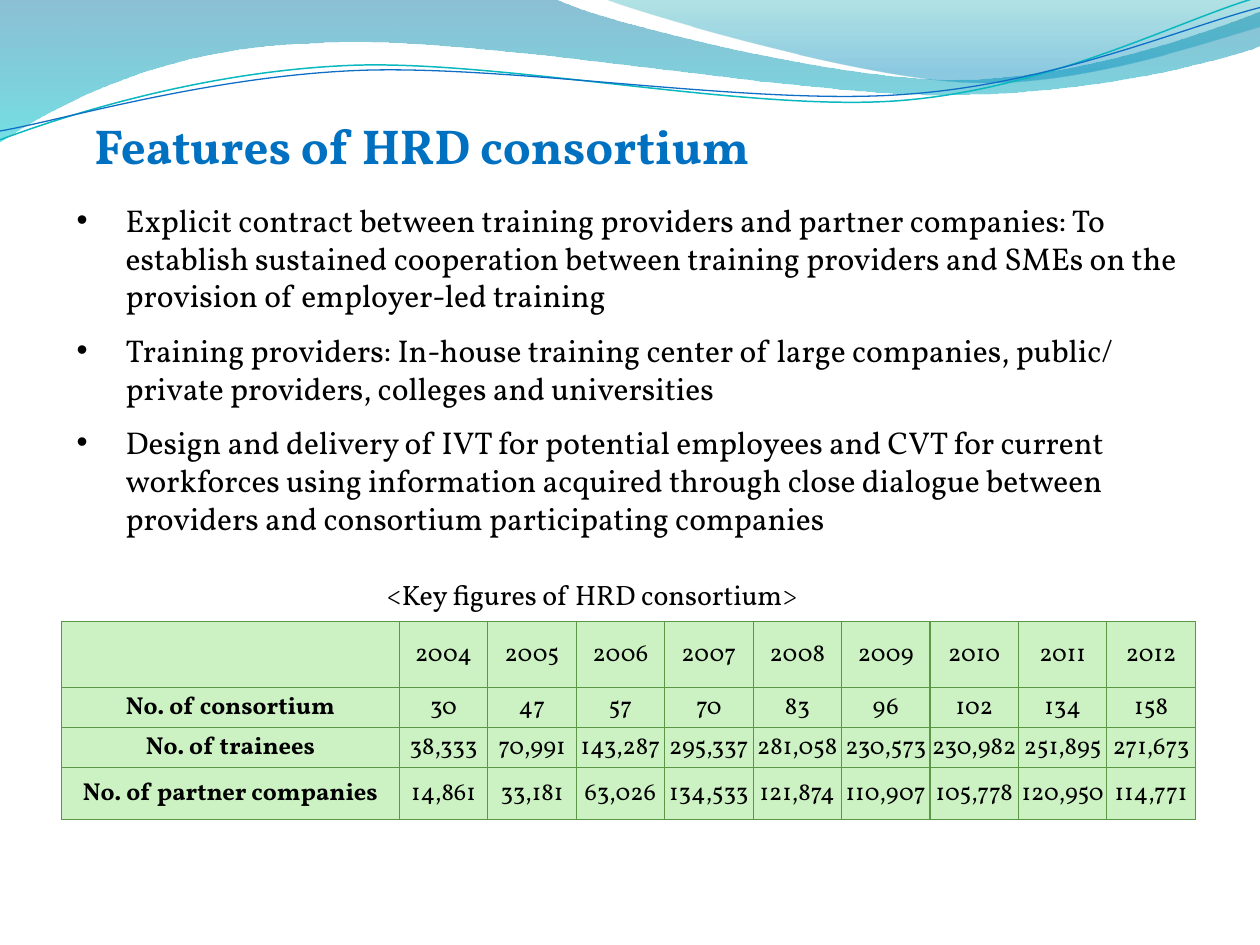
from lxml.etree import SubElement
from pptx import Presentation
from pptx.dml.color import RGBColor
from pptx.enum.text import MSO_ANCHOR as Anchor, PP_ALIGN as Align
from pptx.oxml import parse_xml
from pptx.oxml.ns import nsdecls, qn
from pptx.util import Pt

FONT = "Vollkorn"


def color(value):
    return RGBColor.from_string(value)


def style(para, size, value="000000", bold=False):
    for span in para.runs:
        span.font.name = FONT
        span.font.size = Pt(size)
        span.font.bold = bold
        span.font.color.rgb = color(value)


deck = Presentation()
deck.slide_width, deck.slide_height = Pt(720), Pt(540)
page = deck.slides.add_slide(deck.slide_layouts[6])

waves = [
    ((0, 0), [
        [(4.4, -0.01)],
        [(4.76, 0.17), (6.64, 0.63), (7.58, 0.63)],
        [(8.53, 0.63), (9.58, 0.26), (10, 0.09)],
        [(10.01, 0.36)],
        [(9.83, 0.44), (8.7, 0.76), (7.46, 0.75)],
        [(6.22, 0.75), (3.82, 0.28), (2.57, 0.34)],
        [(1.29, 0.36), (0.46, 0.83), (-0.01, 1.13)],
    ], [(0, "0074A1", 45), (1, "00C6CF", 55)], None),
    ((4.79, -0.01), [
        [(5.09, 0.11), (6.82, 0.62), (7.69, 0.65)],
        [(8.56, 0.69), (9.61, 0.32), (10, 0.21)],
        [(10, 0)],
    ], [(0, "00A1A9", 30), (0.8, "008BBF", 45)], None),
    ((0, 1.11), [
        [(0.48, 0.93), (1.58, 0.57), (2.77, 0.52)],
        [(3.95, 0.47), (5.93, 0.89), (7.13, 0.8)],
        [(8.33, 0.71), (9.38, 0.15), (9.98, -0.02)],
    ], None, ("0AB8BF", 0.85)),
    ((0, 1.04), [
        [(0.47, 0.96), (1.64, 0.61), (2.83, 0.56)],
        [(4.03, 0.51), (5.97, 0.84), (7.17, 0.75)],
        [(8.36, 0.67), (9.41, 0.21), (10, 0.06)],
    ], None, ("0F6FC6", 0.75)),
]
for start, segments, stops, line in waves:
    points = [(Pt(72 * x), Pt(72 * y)) for x, y in [start, *sum(segments, [])]]
    builder = page.shapes.build_freeform(*points[0])
    builder.add_line_segments(points[1:], close=bool(stops))
    wave = builder.convert_to_shape()
    wave.shadow.inherit = False
    edges = iter(list(wave._element.iter(qn("a:lnTo"))))
    for segment in segments:
        curve = next(edges)
        if len(segment) == 3:
            bezier = parse_xml(f'<a:cubicBezTo {nsdecls("a")}/>')
            curve.addprevious(bezier)
            for edge in (curve, next(edges), next(edges)):
                bezier.append(edge[0])
                edge.getparent().remove(edge)
    if stops:
        wave.line.fill.background()
        wave.fill.gradient()
        wave.fill.gradient_angle = 270
        for stop, (position, value, opacity) in zip(wave.fill.gradient_stops, stops):
            stop.position = position
            stop.color.rgb = color(value)
        for node, (position, value, opacity) in zip(wave._element.iter(qn("a:srgbClr")), stops):
            SubElement(node, qn("a:alpha")).set("val", str(opacity * 1000))
    else:
        wave.fill.background()
        wave.line.color.rgb = color(line[0])
        wave.line.width = Pt(line[1])

title = page.shapes.add_textbox(Pt(54), Pt(59.8), Pt(623.5), Pt(42.5)).text_frame
title.word_wrap = True
title.vertical_anchor = Anchor.MIDDLE
title.margin_left = title.margin_right = title.margin_bottom = 0
title.text = "Features of HRD consortium"
style(title.paragraphs[0], 28, "0070C0", True)

features = [
    "Explicit contract between training providers and partner companies: To establish sustained cooperation between training providers and SMEs on the provision of employer-led training",
    "Training providers: In-house training center of large companies, public/\vprivate providers, colleges and universities",
    "Design and delivery of IVT for potential employees and CVT for current workforces using information acquired through close dialogue between providers and consortium participating companies",
]
body = page.shapes.add_textbox(Pt(36.7), Pt(111.2), Pt(646.6), Pt(200.9)).text_frame
body.word_wrap = True
body.text = "\n".join(features)
for index, para in enumerate(body.paragraphs):
    style(para, 18)
    para.space_before = Pt(9.5 if index else 0)
    props = para._p.get_or_add_pPr()
    props.set("marL", str(Pt(28)))
    props.set("indent", str(Pt(-28)))
    SubElement(props, qn("a:buFont")).set("typeface", "Arial")
    SubElement(props, qn("a:buChar")).set("char", "•")

figures = [
    ["", *(str(year) for year in range(2004, 2013))],
    ["No. of consortium", "30", "47", "57", "70", "83", "96", "102", "134", "158"],
    ["No. of trainees", "38,333", "70,991", "143,287", "295,337", "281,058",
     "230,573", "230,982", "251,895", "271,673"],
    ["No. of partner companies", "14,861", "33,181", "63,026", "134,533", "121,874",
     "110,907", "105,778", "120,950", "114,771"],
]
heights = [37.5, 23, 23, 29.5]
table = page.shapes.add_table(4, 10, Pt(35.2), Pt(355.2), Pt(648), Pt(sum(heights))).table
table.first_row = table.horz_banding = False
for index, column in enumerate(table.columns):
    column.width = Pt(50.55 if index else 193)
for row, height, values in zip(table.rows, heights, figures):
    row.height = Pt(height)
    for index, (cell, value) in enumerate(zip(row.cells, values)):
        cell.text = value
        cell.vertical_anchor = Anchor.MIDDLE
        cell.margin_left = cell.margin_right = cell.margin_top = Pt(0.7)
        cell.margin_bottom = 0
        cell.fill.solid()
        cell.fill.fore_color.rgb = color("CCF2C3")
        para = cell.text_frame.paragraphs[0]
        para.alignment = Align.CENTER
        style(para, 14, bold=index == 0)
        for place, side in enumerate("LRTB"):
            cell._tc.tcPr.insert(place, parse_xml(
                f'<a:ln{side} {nsdecls("a")} w="{Pt(0.75)}"><a:solidFill>'
                f'<a:srgbClr val="5B9747"/></a:solidFill></a:ln{side}>'))

caption = page.shapes.add_textbox(Pt(35), Pt(326.6), Pt(607), Pt(26.6)).text_frame
caption.word_wrap = True
caption.text = "<Key figures of HRD consortium>"
caption.paragraphs[0].alignment = Align.CENTER
style(caption.paragraphs[0], 16)

deck.save("out.pptx")
